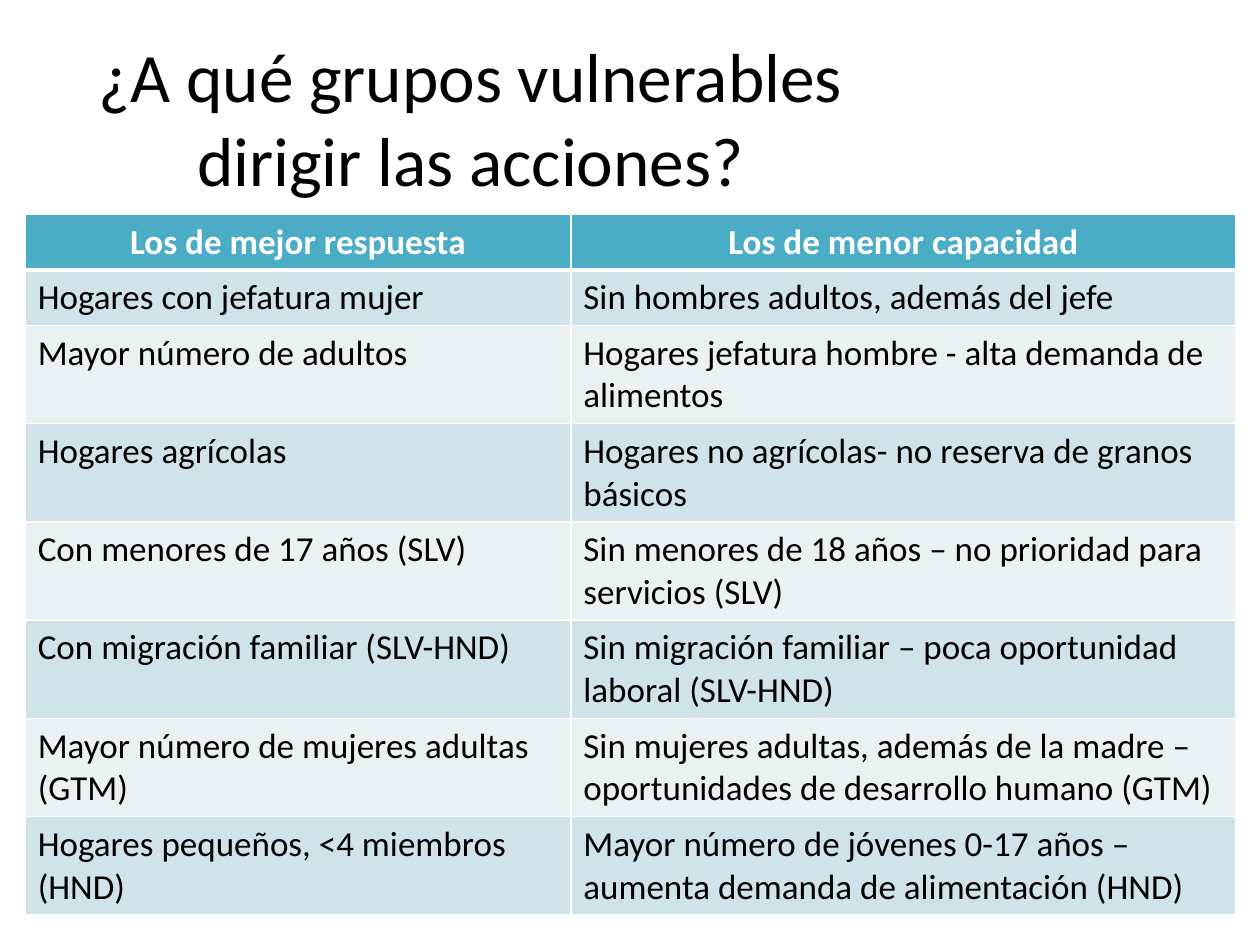
import dataclasses
import typing

import lxml.etree
import pptx
import pptx.dml.color
import pptx.enum.text
import pptx.oxml.ns
import pptx.presentation
import pptx.slide
import pptx.table
import pptx.text.text
import pptx.util

WHITE = pptx.dml.color.RGBColor(0xFF, 0xFF, 0xFF)
BLACK = pptx.dml.color.RGBColor(0x00, 0x00, 0x00)
TEAL = pptx.dml.color.RGBColor(0x4B, 0xAC, 0xC6)
DARK_BAND = pptx.dml.color.RGBColor(0xD0, 0xE3, 0xEA)
LIGHT_BAND = pptx.dml.color.RGBColor(0xE9, 0xF1, 0xF5)

FONT = "Calibri"
SLIDE_WIDTH = pptx.util.Inches(10)
SLIDE_HEIGHT = pptx.util.Inches(7.5)
COLUMN_SHARES = (0.433, 0.528)
ONE_LINE = pptx.util.Inches(0.44)
TWO_LINES = pptx.util.Inches(0.78)


@dataclasses.dataclass(frozen=True)
class Comparison:
    better: str
    weaker: str
    height: pptx.util.Length = TWO_LINES


@dataclasses.dataclass(frozen=True)
class CellStyle:
    fill: pptx.dml.color.RGBColor
    color: pptx.dml.color.RGBColor = BLACK
    bold: bool = False
    alignment: typing.Any = pptx.enum.text.PP_ALIGN.LEFT
    anchor: typing.Any = pptx.enum.text.MSO_ANCHOR.TOP
    top_border: float = 1
    bottom_border: float = 1


HEADER_STYLE = CellStyle(
    TEAL,
    WHITE,
    True,
    pptx.enum.text.PP_ALIGN.CENTER,
    pptx.enum.text.MSO_ANCHOR.MIDDLE,
    bottom_border=3,
)

COMPARISONS = (
    Comparison("Los de mejor respuesta", "Los de menor capacidad", ONE_LINE),
    Comparison("Hogares con jefatura mujer", "Sin hombres adultos, además del jefe", ONE_LINE),
    Comparison("Mayor número de adultos", "Hogares jefatura hombre - alta demanda de alimentos"),
    Comparison("Hogares agrícolas", "Hogares no agrícolas- no reserva de granos básicos"),
    Comparison(
        "Con menores de 17 años (SLV)",
        "Sin menores de 18 años – no prioridad para servicios (SLV)",
    ),
    Comparison(
        "Con migración familiar (SLV-HND)",
        "Sin migración familiar – poca oportunidad laboral (SLV-HND)",
    ),
    Comparison(
        "Mayor número de mujeres adultas (GTM)",
        "Sin mujeres adultas, además de la madre – oportunidades de desarrollo humano (GTM)",
    ),
    Comparison(
        "Hogares pequeños, <4 miembros (HND)",
        "Mayor número de jóvenes 0-17 años – aumenta demanda de alimentación (HND)",
    ),
)


def across(share: float) -> pptx.util.Length:
    return pptx.util.Emu(round(SLIDE_WIDTH * share))


def down(share: float) -> pptx.util.Length:
    return pptx.util.Emu(round(SLIDE_HEIGHT * share))


def add_text(
    frame: pptx.text.text.TextFrame,
    text: str,
    size: float,
    color: pptx.dml.color.RGBColor,
    alignment: typing.Any,
    bold: bool = False,
) -> None:
    paragraph = frame.paragraphs[0]
    paragraph.alignment = alignment
    run = paragraph.add_run()
    run.text = text
    run.font.name = FONT
    run.font.size = pptx.util.Pt(size)
    run.font.bold = bold
    run.font.color.rgb = color


def add_borders(cell: pptx.table._Cell, style: CellStyle) -> None:
    properties = cell._tc.get_or_add_tcPr()
    widths = {"lnL": 1, "lnR": 1, "lnT": style.top_border, "lnB": style.bottom_border}
    for tag, width in widths.items():
        line = lxml.etree.SubElement(
            properties, pptx.oxml.ns.qn(f"a:{tag}"), w=str(pptx.util.Pt(width))
        )
        fill = lxml.etree.SubElement(line, pptx.oxml.ns.qn("a:solidFill"))
        lxml.etree.SubElement(fill, pptx.oxml.ns.qn("a:srgbClr"), val=str(WHITE))


def fill_cell(cell: pptx.table._Cell, text: str, style: CellStyle) -> None:
    add_borders(cell, style)
    cell.fill.solid()
    cell.fill.fore_color.rgb = style.fill
    cell.vertical_anchor = style.anchor
    add_text(cell.text_frame, text, 20, style.color, style.alignment, style.bold)


def style_for(row: int) -> CellStyle:
    if row == 0:
        return HEADER_STYLE
    return CellStyle(
        DARK_BAND if row % 2 else LIGHT_BAND,
        top_border=HEADER_STYLE.bottom_border if row == 1 else 1,
    )


def add_title(slide: pptx.slide.Slide) -> None:
    title = slide.shapes.add_textbox(across(0.05), down(0.04), across(0.647), down(0.167))
    frame = title.text_frame
    frame.word_wrap = True
    frame.vertical_anchor = pptx.enum.text.MSO_ANCHOR.MIDDLE
    add_text(
        frame,
        "¿A qué grupos vulnerables dirigir las acciones?",
        39.6,
        BLACK,
        pptx.enum.text.PP_ALIGN.CENTER,
    )


def add_comparison_table(slide: pptx.slide.Slide) -> None:
    table = slide.shapes.add_table(
        len(COMPARISONS),
        len(COLUMN_SHARES),
        across(0.02),
        down(0.227),
        across(sum(COLUMN_SHARES)),
        pptx.util.Emu(sum(comparison.height for comparison in COMPARISONS)),
    ).table
    for column, share in zip(table.columns, COLUMN_SHARES):
        column.width = across(share)
    for row, comparison in enumerate(COMPARISONS):
        table.rows[row].height = comparison.height
        for column, text in enumerate((comparison.better, comparison.weaker)):
            fill_cell(table.cell(row, column), text, style_for(row))


def main() -> None:
    presentation = pptx.Presentation()
    presentation.slide_width = SLIDE_WIDTH
    presentation.slide_height = SLIDE_HEIGHT
    slide = presentation.slides.add_slide(presentation.slide_layouts[6])
    add_title(slide)
    add_comparison_table(slide)
    presentation.save("out.pptx")


if __name__ == "__main__":
    main()
